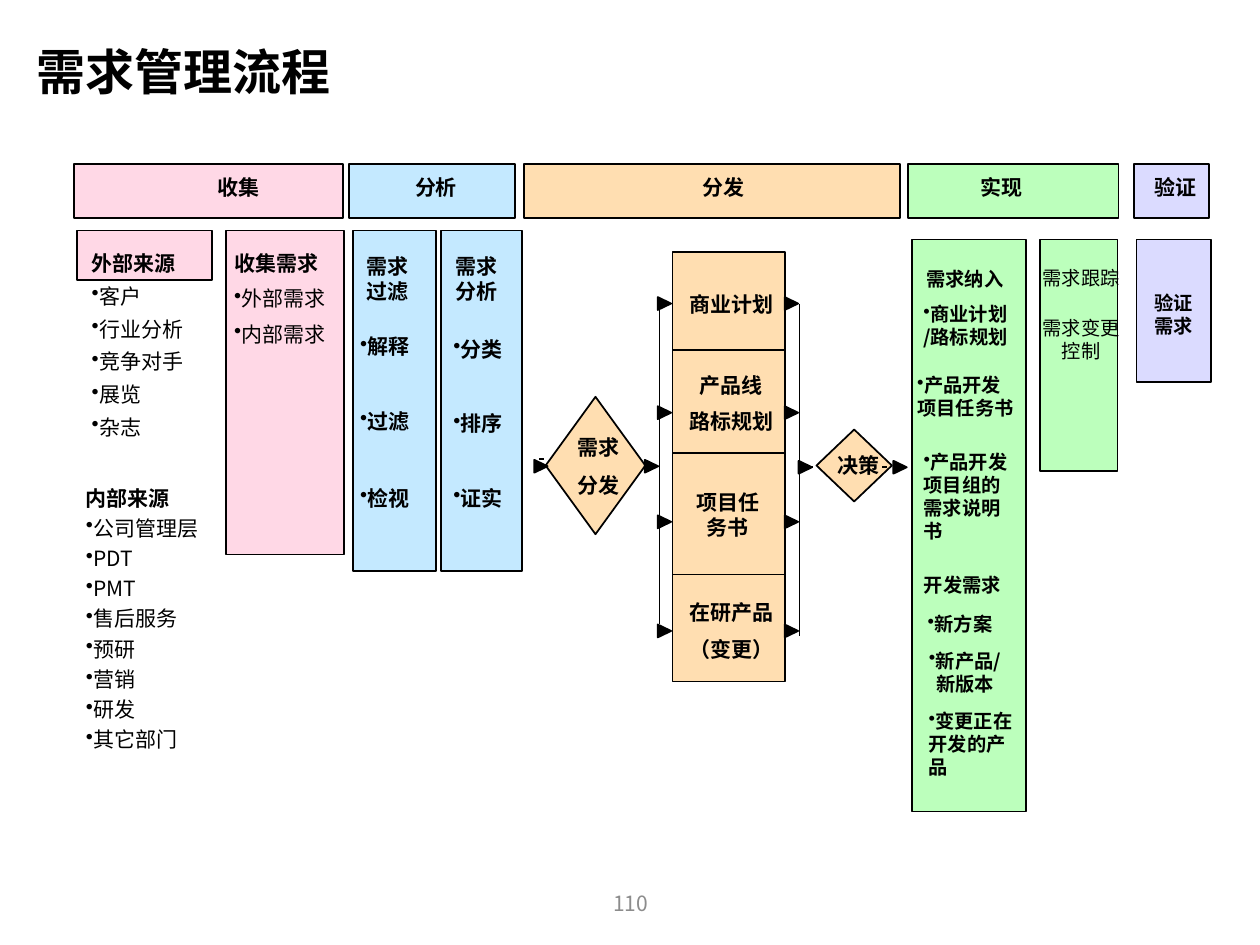
from pptx import Presentation
from pptx.dml.color import RGBColor
from pptx.enum.shapes import MSO_CONNECTOR, MSO_SHAPE
from pptx.enum.text import MSO_ANCHOR, MSO_AUTO_SIZE, PP_ALIGN
from pptx.oxml.ns import qn
from pptx.util import Cm, Pt
from lxml.etree import SubElement

FONT = "Noto Sans CJK SC"
PINK, BLUE, SAND = "FFD8E6", "C4E9FF", "FFDEB1"
GREEN, LILAC, BLACK = "BCFFBC", "DBDBFF", "000000"
LEFT, CENTER = PP_ALIGN.LEFT, PP_ALIGN.CENTER

deck = Presentation()
deck.slide_width, deck.slide_height = Cm(25.4), Cm(19.05)
slide = deck.slides.add_slide(deck.slide_layouts[6])
shapes = slide.shapes


def paint(item, fill=None, width=1):
    """Outline in black; fill a shape, or take the shadow off a connector."""
    item.line.color.rgb = RGBColor.from_string(BLACK)
    item.line.width = Pt(width)
    if fill:
        item.shadow.inherit = False
        item.fill.solid()
        item.fill.fore_color.rgb = RGBColor.from_string(fill)
    else:
        SubElement(item._element.spPr, qn("a:effectLst"))


def write(text, x, y, w, h, size=12, bold=True, rest=None, align=CENTER,
          color=BLACK, space=None, wrap=False, pad=(0, 0), grow=True,
          anchor=MSO_ANCHOR.TOP):
    """One paragraph a line; a leading • becomes a bullet; rest is bold after line one."""
    box = shapes.add_textbox(Cm(x), Cm(y), Cm(w), Cm(h))
    frame = box.text_frame
    frame.word_wrap = wrap
    frame.vertical_anchor = anchor
    frame.auto_size = MSO_AUTO_SIZE.SHAPE_TO_FIT_TEXT if grow else MSO_AUTO_SIZE.NONE
    frame.margin_left = frame.margin_right = Cm(pad[0])
    frame.margin_top = frame.margin_bottom = Cm(pad[1])
    for i, line in enumerate(text.split("\n")):
        para = frame.add_paragraph() if i else frame.paragraphs[0]
        para.alignment = align
        if space:
            para.line_spacing = space
        if line.startswith("•"):
            props = para._p.get_or_add_pPr()
            props.set("marL", "0")
            props.set("indent", "0")
            SubElement(props, qn("a:buChar")).set("char", "•")
        run = para.add_run()
        run.text = line.lstrip("•")
        font = run.font
        font.name, font.size = FONT, Pt(size)
        font.bold = rest if i and rest is not None else bold
        font.color.rgb = RGBColor.from_string(color)
        SubElement(run._r.get_or_add_rPr(), qn("a:ea")).set("typeface", FONT)


# Title and page number
write("需求管理流程", 0.51, 0.71, 23.22, 1.6, size=28, align=LEFT, space=0.9,
      wrap=True, pad=(0.23, 0.1), grow=False, anchor=MSO_ANCHOR.MIDDLE)
write("110", 9.86, 17.7, 5.71, 1.02, bold=False, color="8C8C8C", wrap=True,
      grow=False, anchor=MSO_ANCHOR.MIDDLE)

# Boxes
TOP, LOW = 4.65, 4.83
boxes = [
    (1.55, TOP, 2.72, 0.99, PINK), (4.55, TOP, 2.39, 6.53, PINK),
    (7.11, TOP, 1.68, 6.86, BLUE), (8.89, TOP, 1.63, 6.86, BLUE),
    (18.39, LOW, 2.29, 11.53, GREEN), (20.96, LOW, 1.57, 4.67, GREEN),
    (22.91, LOW, 1.5, 2.87, LILAC),
]
plans = [(5.08, 2.03), (7.06, 2.16), (9.14, 3.02), (11.58, 2.16)]
boxes += [(13.56, y, 2.26, h, SAND) for y, h in plans]
for x, y, w, h, fill in boxes:
    paint(shapes.add_shape(MSO_SHAPE.RECTANGLE, Cm(x), Cm(y), Cm(w), Cm(h)), fill)
for x, y, w, h in [(11, 8, 2.01, 2.77), (16.46, 8.66, 1.52, 1.45)]:
    paint(shapes.add_shape(MSO_SHAPE.DIAMOND, Cm(x), Cm(y), Cm(w), Cm(h)), SAND)

# Stage headings
stages = [
    ("收集", 1.5, 5.41, 4.37, PINK), ("分析", 7.04, 3.35, 8.36, BLUE),
    ("分发", 10.57, 7.57, 14.15, SAND), ("实现", 18.31, 4.24, 19.76, GREEN),
    ("验证", 22.86, 1.52, 23.27, LILAC),
]
for name, x, w, mid, fill in stages:
    paint(shapes.add_shape(MSO_SHAPE.RECTANGLE, Cm(x), Cm(3.3), Cm(w), Cm(1.1)), fill)
    write(name, mid, 3.51, 0.86, 0.51)

# Sources and collecting
write("外部来源\n•客户\n•行业分析\n•竞争对手\n•展览\n•杂志", 1.85, 4.9, 2.03, 4.01,
      rest=False, align=LEFT, space=1.3, wrap=True)
write("内部来源\n•公司管理层\n•PDT\n•PMT\n•售后服务\n•预研\n•营销\n•研发\n•其它部门",
      1.5, 9.58, 2.77, 6.38, rest=False, align=LEFT, space=1.2, wrap=True,
      pad=(0.23, 0.1))
write("收集需求\n•外部需求\n•内部需求", 4.72, 4.85, 1.93, 2.16,
      rest=False, align=LEFT, space=1.4)

# Filtering and analysis
steps = [
    ("需求\n过滤", 7.39, 7.26, [("•解释", 6.73), ("•过滤", 8.23), ("•检视", 9.78)]),
    ("需求\n分析", 9.19, 9.14, [("•分类", 6.78), ("•排序", 8.28), ("•证实", 9.78)]),
]
for head, x, left, items in steps:
    write(head, x, 5.11, 0.86, 1.02, align=LEFT)
    for item, y in items:
        write(item, left, y, 1.07, 0.51, align=LEFT)

# Distribution
for text, x, y, w in [
    ("商业计划", 13.89, 5.87, 1.7), ("产品线", 14.1, 7.52, 1.27),
    ("路标规划", 13.89, 8.23, 1.7), ("在研产品", 13.89, 12.09, 1.7),
    ("（变更）", 13.89, 12.83, 1.7), ("需求", 11.63, 8.76, 0.86),
    ("分发", 11.63, 9.53, 0.86), ("决策", 16.87, 9.12, 0.86),
]:
    write(text, x, y, w, 0.51)
write("项目任务书", 13.92, 9.86, 1.5, 1.02, wrap=True)

# Delivery and checking
for text, x, y, w, h, align in [
    ("需求纳入", 18.67, 5.38, 1.57, 0.48, CENTER),
    ("•产品开发\n项目任务书", 18.49, 7.52, 1.96, 0.94, LEFT),
    ("•产品开发\n项目组的\n需求说明\n书", 18.62, 9.07, 1.75, 1.93, LEFT),
    ("开发需求", 18.62, 11.56, 1.57, 0.48, CENTER),
    ("•新方案", 18.67, 12.34, 1.37, 0.48, CENTER),
    ("•新产品/\n新版本", 18.67, 13.08, 1.57, 0.94, CENTER),
    ("•变更正在\n开发的产\n品", 18.72, 14.3, 1.75, 1.42, LEFT),
]:
    write(text, x, y, w, h, size=11, align=align)
write("•商业计划\n/路标规划", 18.59, 6.1, 1.75, 0.94, size=11, wrap=True)
write("需求跟踪", 21.01, 5.36, 1.57, 0.48, size=11, bold=False)
write("需求变更\n控制", 21.01, 6.38, 1.57, 0.94, size=11, bold=False)
write("验证需求", 22.91, 5.78, 1.5, 1.14, size=11, wrap=True, pad=(0.23, 0.1))

# Arrows: left edge, middle, and offset of the short stub
arrows = [(x, 6.12 + 2.2 * row, 0.12, 0) for row in range(4) for x in (13.26, 15.82)]
arrows += [(10.77, 9.4, 0.1, -0.15), (13, 9.4, 0.1, 0),
           (16.1, 9.42, 0.18, 0), (18.01, 9.42, -0.23, 0)]
lines = []
for x, y, dx, dy in arrows:
    path = shapes.build_freeform(Cm(x), Cm(y - 0.13))
    path.add_line_segments([(Cm(x + 0.27), Cm(y)), (Cm(x), Cm(y + 0.13))], close=True)
    paint(path.convert_to_shape(), BLACK)
    lines.append((x + dx, y + dy, x + dx + 0.1, y + dy, 1))
lines += [(13.28, 6.12, 13.28, 12.57, 0.13), (16.1, 6.12, 16.1, 12.83, 0.13)]
for x, y, right, end, width in lines:
    paint(shapes.add_connector(MSO_CONNECTOR.STRAIGHT, Cm(x), Cm(y), Cm(right), Cm(end)),
          width=width)

deck.save("out.pptx")
